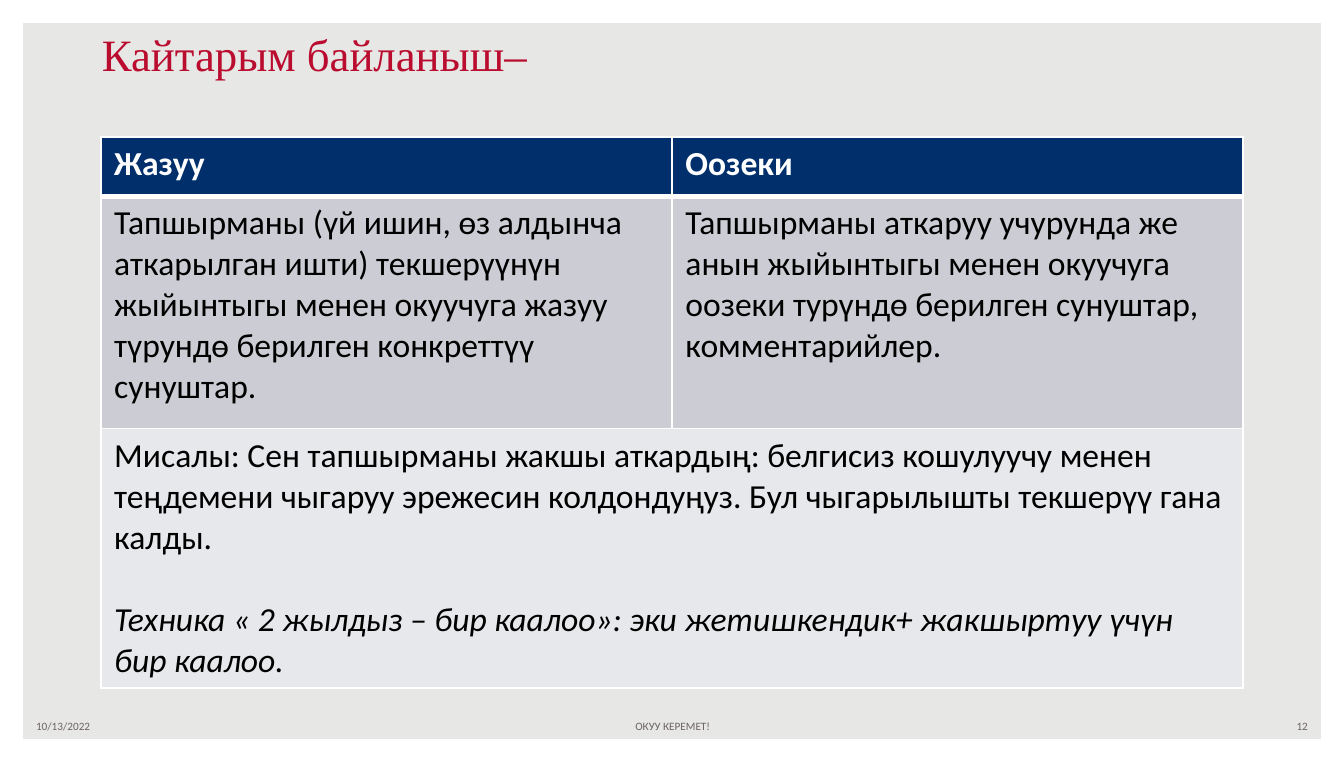
"""Build the feedback slide comparing written and oral comments."""
from lxml import etree
from pptx import Presentation
from pptx.dml.color import RGBColor
from pptx.enum.shapes import MSO_SHAPE
from pptx.enum.text import MSO_ANCHOR, PP_ALIGN
from pptx.oxml.ns import qn
from pptx.util import Inches, Pt

FRAME = MSO_SHAPE.FRAME
TOP, MIDDLE = MSO_ANCHOR.TOP, MSO_ANCHOR.MIDDLE
LEFT, CENTER, RIGHT = PP_ALIGN.LEFT, PP_ALIGN.CENTER, PP_ALIGN.RIGHT

TITLE = "Кайтарым байланыш–"
HEADINGS = ["Жазуу", "Оозеки"]
DESCRIPTIONS = [
    "Тапшырманы (үй ишин, өз алдынча аткарылган ишти) текшерүүнүн жыйынтыгы "
    "менен окуучуга жазуу түрундө берилген конкреттүү сунуштар.",
    "Тапшырманы аткаруу учурунда же анын жыйынтыгы менен окуучуга оозеки "
    "турүндө берилген сунуштар, комментарийлер.",
]
EXAMPLE = (
    "Мисалы: Сен тапшырманы жакшы аткардың: белгисиз кошулуучу менен теңдемени "
    "чыгаруу эрежесин колдондуңуз. Бул чыгарылышты текшерүү гана калды."
)
TECHNIQUE = (
    "Техника « 2 жылдыз – бир каалоо»: эки жетишкендик+ жакшыртуу үчүн бир каалоо."
)
FOOTERS = [
    ("10/13/2022", 0.17, 2.33, LEFT),
    ("ОКУУ КЕРЕМЕТ!", 3.42, 3.17, CENTER),
    ("12", 7.5, 2.33, RIGHT),
]

SLIDE_SIZE = (10, 5.67)
TITLE_BOX = (0.66, 0.15, 8.5, 0.48)
TABLE_ORIGIN = (0.75, 1.02)
COLUMN_WIDTHS = [4.25, 4.25]
ROW_HEIGHTS = [0.44, 1.73, 1.9]
FOOTER_TOP, FOOTER_HEIGHT = 5.3, 0.2

THEME = {
    "background": "E7E7E5",
    "frame": "FFFFFF",
    "border": "FFFFFF",
    "rows": ["002F6C", "CCCDD4", "E7E8EB"],
    "thin": 1,
    "thick": 3,
    "title": {"name": "Times New Roman", "size": Pt(24), "color": "BA0C2F"},
    "heading": {"name": "Calibri", "size": Pt(18), "color": "FFFFFF", "bold": True},
    "body": {"name": "Calibri", "size": Pt(18), "color": "000000", "bold": False},
    "footer": {"name": "Calibri", "size": Pt(6), "color": "6C6463"},
}
THEME["technique"] = {**THEME["body"], "italic": True}


def set_fill(fill, color):
    fill.solid()
    fill.fore_color.rgb = RGBColor.from_string(color)


def write(paragraph, text, style):
    run = paragraph.add_run()
    run.text = text
    for attribute, value in THEME[style].items():
        if attribute == "color":
            run.font.color.rgb = RGBColor.from_string(value)
        else:
            setattr(run.font, attribute, value)


def add_text(slide, text, box, style, anchor, alignment=LEFT):
    shape = slide.shapes.add_textbox(*map(Inches, box))
    frame = shape.text_frame
    frame.word_wrap = True
    frame.vertical_anchor = anchor
    paragraph = frame.paragraphs[0]
    paragraph.alignment = alignment
    write(paragraph, text, style)


def set_borders(cell, widths):
    properties = cell._tc.get_or_add_tcPr()
    for side, width in widths.items():
        line = etree.SubElement(properties, qn(f"a:ln{side}"), w=str(Pt(width)))
        fill = etree.SubElement(line, qn("a:solidFill"))
        etree.SubElement(fill, qn("a:srgbClr"), val=THEME["border"])


def add_feedback_table(slide):
    size = (sum(COLUMN_WIDTHS), sum(ROW_HEIGHTS))
    table = slide.shapes.add_table(
        len(ROW_HEIGHTS), len(COLUMN_WIDTHS), *map(Inches, TABLE_ORIGIN + size)
    ).table
    table.horz_banding = False
    for column, width in zip(table.columns, COLUMN_WIDTHS):
        column.width = Inches(width)
    for index, (row, height) in enumerate(zip(table.rows, ROW_HEIGHTS)):
        row.height = Inches(height)
        widths = dict.fromkeys("LRTB", THEME["thin"])
        if index < 2:
            widths["BT"[index]] = THEME["thick"]
        for cell in row.cells:
            set_borders(cell, widths)
            set_fill(cell.fill, THEME["rows"][index])
    for index, (texts, style) in enumerate([(HEADINGS, "heading"), (DESCRIPTIONS, "body")]):
        for cell, text in zip(table.rows[index].cells, texts):
            write(cell.text_frame.paragraphs[0], text, style)
    example = table.cell(2, 0)
    example.merge(table.cell(2, 1))
    write(example.text_frame.paragraphs[0], EXAMPLE, "body")
    technique = example.text_frame.add_paragraph()
    technique.space_before = Pt(22)
    write(technique, TECHNIQUE, "technique")


def main():
    presentation = Presentation()
    presentation.slide_width, presentation.slide_height = map(Inches, SLIDE_SIZE)
    slide = presentation.slides.add_slide(presentation.slide_layouts[6])
    set_fill(slide.background.fill, THEME["background"])

    frame = slide.shapes.add_shape(FRAME, 0, 0, *map(Inches, SLIDE_SIZE))
    frame.adjustments[0] = 0.03
    frame.shadow.inherit = False
    set_fill(frame.fill, THEME["frame"])
    frame.line.fill.background()

    add_feedback_table(slide)
    for text, left, width, alignment in FOOTERS:
        box = (left, FOOTER_TOP, width, FOOTER_HEIGHT)
        add_text(slide, text, box, "footer", MIDDLE, alignment)
    add_text(slide, TITLE, TITLE_BOX, "title", TOP)
    presentation.save("out.pptx")


if __name__ == "__main__":
    main()
